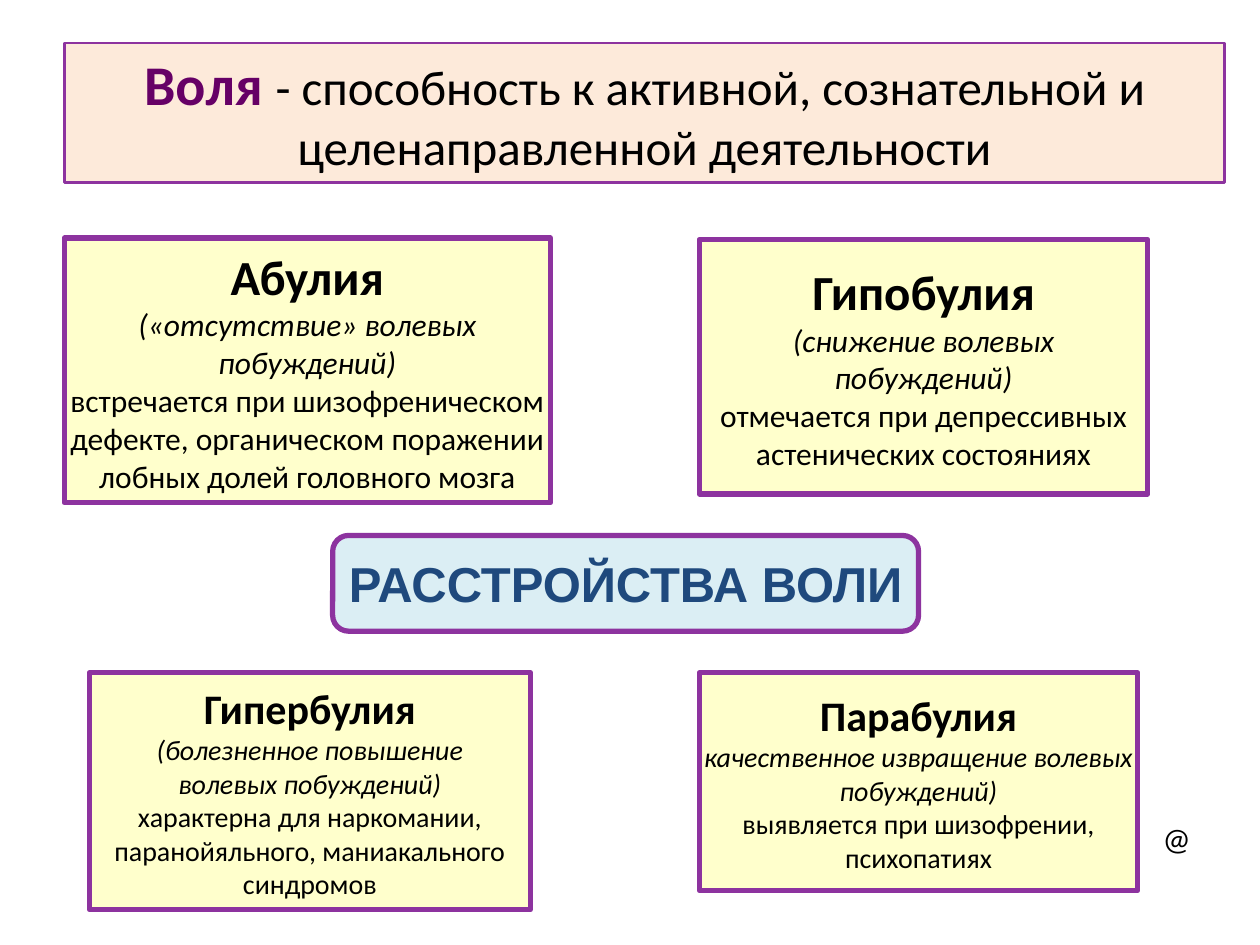
from pptx import Presentation
from pptx.dml.color import RGBColor
from pptx.enum.shapes import MSO_SHAPE as Shape
from pptx.enum.text import MSO_ANCHOR as Anchor, MSO_AUTO_SIZE as AutoSize, PP_ALIGN as Align
from pptx.util import Inches, Pt

PEACH = RGBColor(0xFD, 0xEA, 0xDA)
CREAM = RGBColor(0xFF, 0xFF, 0xCC)
PALE_BLUE = RGBColor(0xDB, 0xEE, 0xF4)
VIOLET = RGBColor(0x8D, 0x33, 0x9F)
PLUM = RGBColor(0x66, 0x00, 0x66)
NAVY = RGBColor(0x1F, 0x49, 0x7D)
BLACK = RGBColor(0, 0, 0)

TERM = "Воля "
DEFINITION = "- способность к активной, сознательной и целенаправленной деятельности"
CENTER_TITLE = "РАССТРОЙСТВА ВОЛИ"
MARK = "@"
DISORDERS = [
    {
        "box": (0.51, 1.89, 3.86, 2.1), "sizes": (28, 18),
        "name": "Абулия",
        "meaning": ["(«отсутствие» волевых", "побуждений)"],
        "occurrence": ["встречается при шизофреническом",
                       "дефекте, органическом поражении",
                       "лобных долей головного мозга"],
    },
    {
        "box": (0.71, 5.34, 3.5, 1.88), "sizes": (24, 16),
        "name": "Гипербулия",
        "meaning": ["(болезненное повышение", "волевых побуждений)"],
        "occurrence": ["характерна для наркомании,",
                       "паранойяльного, маниакального",
                       "синдромов"],
    },
    {
        "box": (5.55, 1.9, 3.56, 2.02), "sizes": (28, 18),
        "name": "Гипобулия",
        "meaning": ["(снижение волевых", "побуждений)"],
        "occurrence": ["отмечается при депрессивных", "астенических состояниях"],
    },
    {
        "box": (5.55, 5.34, 3.48, 1.73), "sizes": (24, 16),
        "name": "Парабулия",
        "meaning": ["качественное извращение волевых", "побуждений)"],
        "occurrence": ["выявляется при шизофрении,", "психопатиях"],
    },
]


def add_run(paragraph, text, size, color=BLACK, name="Calibri", bold=False, italic=False):
    run = paragraph.add_run()
    run.text = text
    font = run.font
    font.size, font.name = Pt(size), name
    font.bold, font.italic = bold, italic
    font.color.rgb = color


def add_lines(frame, lines):
    for index, (text, style) in enumerate(lines):
        paragraph = frame.add_paragraph() if index else frame.paragraphs[0]
        paragraph.alignment = Align.CENTER
        add_run(paragraph, text, **style)


def add_box(slide, box, fill, line_width=3, kind=Shape.RECTANGLE, wrap=False, anchor=Anchor.MIDDLE):
    shape = slide.shapes.add_shape(kind, *map(Inches, box))
    shape.shadow.inherit = False
    shape.fill.solid()
    shape.fill.fore_color.rgb = fill
    shape.line.color.rgb = VIOLET
    shape.line.width = Pt(line_width)
    frame = shape.text_frame
    frame.word_wrap = wrap
    frame.vertical_anchor = anchor
    return frame


def add_disorder(slide, disorder):
    name_size, text_size = disorder["sizes"]
    lines = [(disorder["name"], {"size": name_size, "bold": True})]
    lines += [(text, {"size": text_size, "italic": True}) for text in disorder["meaning"]]
    lines += [(text, {"size": text_size}) for text in disorder["occurrence"]]
    add_lines(add_box(slide, disorder["box"], CREAM), lines)


def main():
    presentation = Presentation()
    presentation.slide_width, presentation.slide_height = Inches(10), Inches(7.5)
    slide = presentation.slides.add_slide(presentation.slide_layouts[6])

    header = add_box(slide, (0.51, 0.34, 9.21, 1.11), PEACH, line_width=1.5, wrap=True, anchor=Anchor.TOP)
    header.auto_size = AutoSize.SHAPE_TO_FIT_TEXT
    add_lines(header, [(TERM, {"size": 32, "color": PLUM, "bold": True})])
    add_run(header.paragraphs[0], DEFINITION, 28)

    for disorder in DISORDERS:
        add_disorder(slide, disorder)

    center = add_box(slide, (2.64, 4.25, 4.65, 0.76), PALE_BLUE, kind=Shape.ROUNDED_RECTANGLE)
    add_lines(center, [(CENTER_TITLE, {"size": 28, "color": NAVY, "name": "Arial", "bold": True})])

    mark = slide.shapes.add_textbox(*map(Inches, (9.13, 6.43, 0.53, 0.43))).text_frame
    mark.word_wrap = True
    mark.auto_size = AutoSize.SHAPE_TO_FIT_TEXT
    paragraph = mark.paragraphs[0]
    paragraph.line_spacing = 1.07
    paragraph.space_after = Pt(8)
    add_run(paragraph, MARK, 18)

    presentation.save("out.pptx")


if __name__ == "__main__":
    main()
